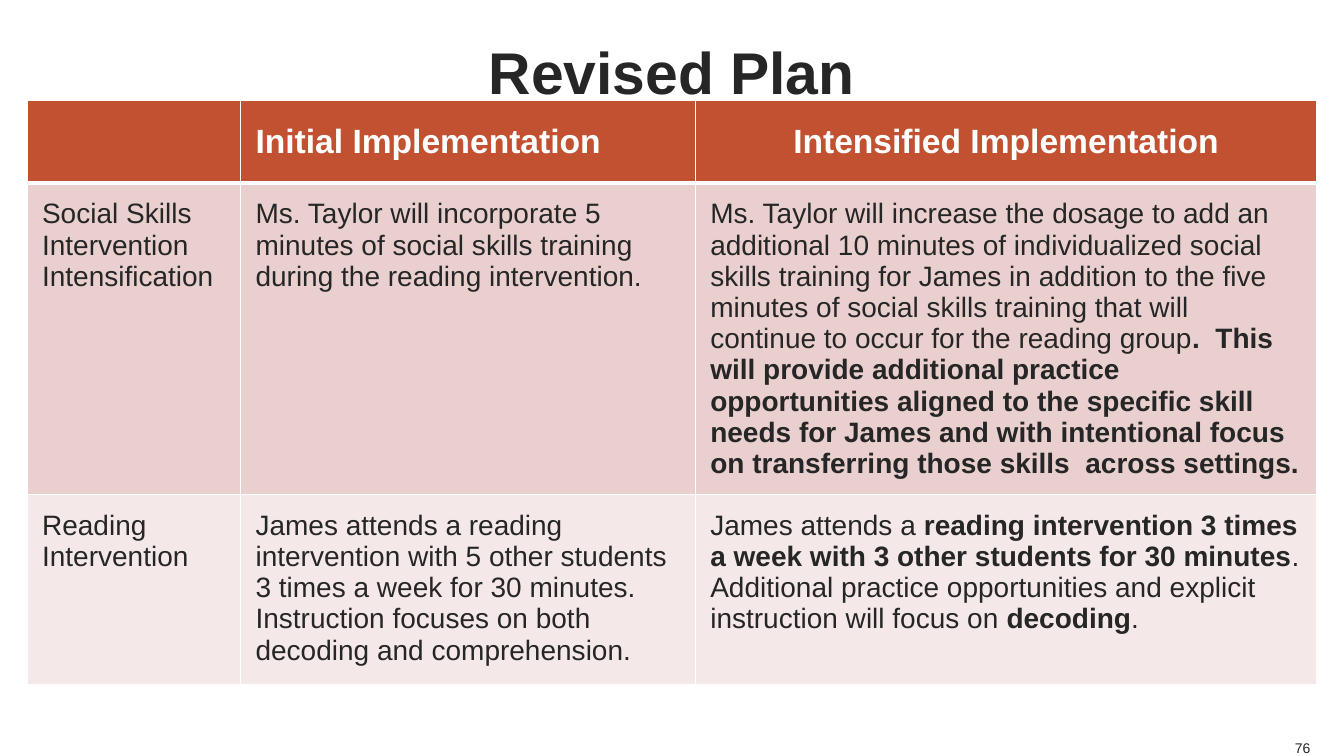
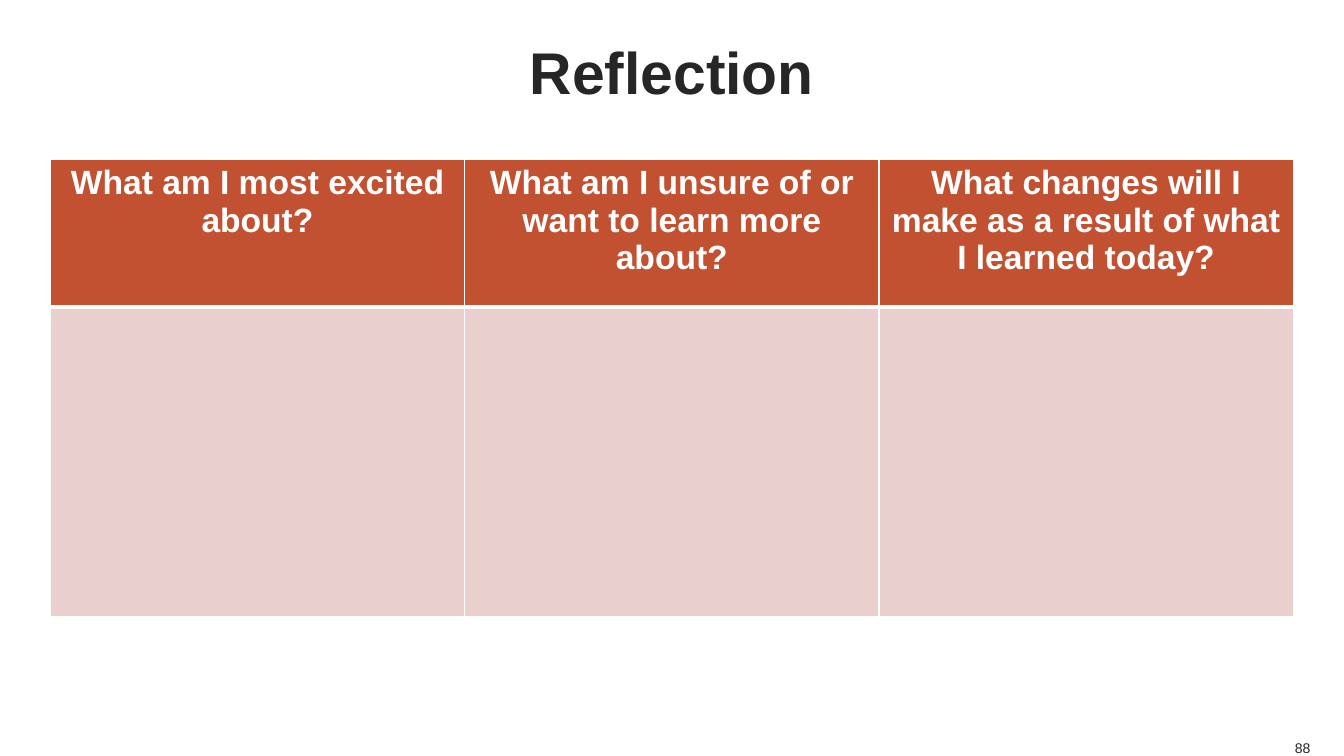
from lxml import etree
from pptx import Presentation
from pptx.dml.color import RGBColor
from pptx.enum.text import MSO_ANCHOR, MSO_AUTO_SIZE, PP_ALIGN
from pptx.oxml.ns import qn
from pptx.util import Cm, Pt

LEFT, CENTER, RIGHT = PP_ALIGN.LEFT, PP_ALIGN.CENTER, PP_ALIGN.RIGHT
TOP, MIDDLE, BOTTOM = MSO_ANCHOR.TOP, MSO_ANCHOR.MIDDLE, MSO_ANCHOR.BOTTOM
FIT_NONE = MSO_AUTO_SIZE.NONE

FONT = "Arial"
COLORS = {"ink": "262626", "white": "FFFFFF", "head": "C25131",
          "bands": ["E9D0CE", "F4E9E8"]}

# A cell is a tuple of pieces; every second piece is bold.
SLIDES = [
    {
        "title": "Revised Plan", "number": "76",
        "at": (0.68, 2.54), "cols": [5.38, 11.46, 15.67], "rows": [2.08, 7.82, 4.78],
        "pad": (0.38, 0.38), "anchor": MIDDLE, "aligns": [LEFT, LEFT, CENTER],
        "cells": [
            [(), ("Initial Implementation",), ("Intensified Implementation",)],
            [("Social Skills Intervention Intensification",),
             ("Ms. Taylor will incorporate 5 minutes of social skills training "
              "during the reading intervention.",),
             ("Ms. Taylor will increase the dosage to add an additional 10 minutes of "
              "individualized social skills training for James in addition to the five "
              "minutes of social skills training that will continue to occur for the "
              "reading group",
              ".  This will provide additional practice opportunities aligned to the "
              "specific skill needs for James and with intentional focus on "
              "transferring those skills  across settings.")],
            [("Reading Intervention",),
             ("James attends a reading intervention with 5 other students 3 times a "
              "week for 30 minutes. Instruction focuses on both decoding and "
              "comprehension.",),
             ("James attends a ",
              "reading intervention 3 times a week with 3 other students for 30 minutes",
              ". Additional practice opportunities and explicit instruction will focus on ",
              "decoding", ".")],
        ],
    },
    {
        "title": "Reflection", "number": "88",
        "at": (1.27, 4.01), "cols": [10.44] * 3, "rows": [3.73, 7.8],
        "pad": (0.25, 0.13), "anchor": TOP, "aligns": [CENTER] * 3,
        "cells": [
            [("What am I most excited about?",),
             ("What am I unsure of or want to learn more about?",),
             ("What changes will I make as a result of what I learned today?",)],
            [(), (), ()],
        ],
    },
]


def style(par, size, color, align, bold=False):
    par.alignment = align
    font = par.font
    font.name, font.size, font.bold = FONT, Pt(size), bold
    font.color.rgb = RGBColor.from_string(COLORS[color])


def clear_pad(frame, anchor):
    frame.margin_left = frame.margin_right = frame.margin_top = frame.margin_bottom = 0
    frame.vertical_anchor = anchor


def add_title(slide, text):
    box = slide.shapes.title
    box.left, box.top, box.width, box.height = Cm(1.27), Cm(0), Cm(31.32), Cm(3.56)
    frame = box.text_frame
    frame.text = text
    frame.auto_size = FIT_NONE
    clear_pad(frame, MIDDLE)
    style(frame.paragraphs[0], 42, "ink", CENTER, True)


def add_number(slide, text):
    box = slide.shapes.add_textbox(Cm(32.02), Cm(18.62), Cm(1), Cm(0.43))
    frame = box.text_frame
    frame.text = text
    frame.word_wrap = True
    clear_pad(frame, BOTTOM)
    style(frame.paragraphs[0], 10, "ink", RIGHT)


def add_borders(cell, top, bottom):
    """Draw white cell edges; top and bottom are widths in points."""
    props = cell._tc.get_or_add_tcPr()
    for side, width in (("L", 1), ("R", 1), ("T", top), ("B", bottom)):
        line = etree.SubElement(props, qn(f"a:ln{side}"), w=str(Pt(width)))
        fill = etree.SubElement(line, qn("a:solidFill"))
        etree.SubElement(fill, qn("a:srgbClr"), val=COLORS["white"])


def fill_cell(cell, pieces, row, align, plan):
    head = row == 0
    add_borders(cell, 3 if row == 1 else 1, 3 if head else 1)
    color = COLORS["head"] if head else COLORS["bands"][(row - 1) % 2]
    cell.fill.solid()
    cell.fill.fore_color.rgb = RGBColor.from_string(color)
    side, edge = map(Cm, plan["pad"])
    cell.margin_left = cell.margin_right = side
    cell.margin_top = cell.margin_bottom = edge
    cell.vertical_anchor = plan["anchor"] if head else TOP
    par = cell.text_frame.paragraphs[0]
    if head:
        style(par, 24, "white", align, True)
    else:
        style(par, 20, "ink", LEFT)
    for i, text in enumerate(pieces):
        run = par.add_run()
        run.text = text
        if i % 2:
            run.font.bold = True


def add_grid(slide, plan):
    cols, rows = plan["cols"], plan["rows"]
    left, top = plan["at"]
    table = slide.shapes.add_table(len(rows), len(cols), Cm(left), Cm(top),
                                   Cm(sum(cols)), Cm(sum(rows))).table
    for col, width in zip(table.columns, cols):
        col.width = Cm(width)
    for r, (height, line) in enumerate(zip(rows, plan["cells"])):
        table.rows[r].height = Cm(height)
        for c, pieces in enumerate(line):
            fill_cell(table.cell(r, c), pieces, r, plan["aligns"][c], plan)


def main():
    deck = Presentation()
    deck.slide_width, deck.slide_height = Cm(33.87), Cm(19.05)
    for plan in SLIDES:
        slide = deck.slides.add_slide(deck.slide_layouts[5])
        add_title(slide, plan["title"])
        add_grid(slide, plan)
        add_number(slide, plan["number"])
    deck.save("out.pptx")


if __name__ == "__main__":
    main()
